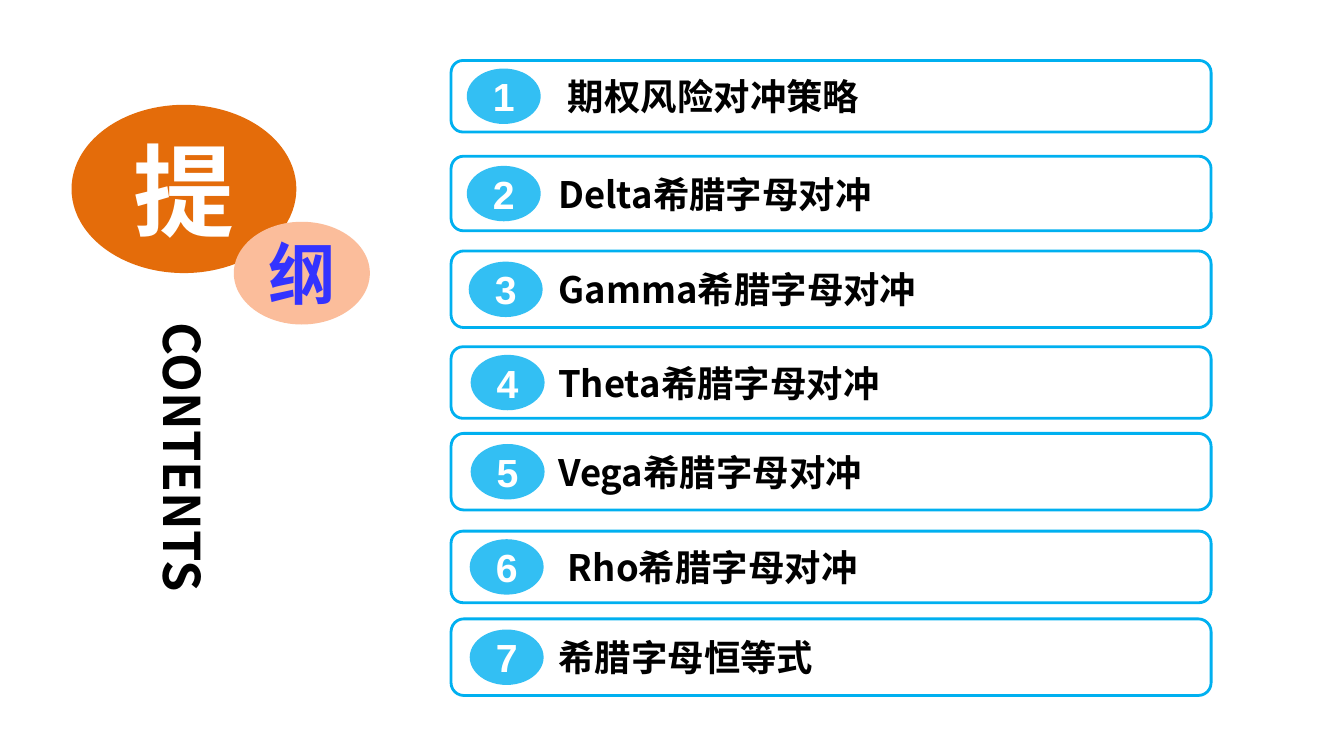
from pptx import Presentation
from pptx.dml.color import RGBColor
from pptx.enum.shapes import MSO_SHAPE
from pptx.enum.text import MSO_ANCHOR, PP_ALIGN
from pptx.oxml.ns import qn
from pptx.util import Pt
from lxml import etree

ROUNDED = MSO_SHAPE.ROUNDED_RECTANGLE
OVAL = MSO_SHAPE.OVAL
MIDDLE = MSO_ANCHOR.MIDDLE
LEFT = PP_ALIGN.LEFT
CENTER = PP_ALIGN.CENTER
CJK = "Noto Sans CJK SC"

# text, top, height, badge left, text inset
TOPICS = [
    ("期权风险对冲策略", 43.2, 51.1, 333.4, 81),
    ("Delta希腊字母对冲", 111.6, 53.3, 333.4, 74),
    ("Gamma希腊字母对冲", 179.3, 54.7, 334.8, 74),
    ("Theta希腊字母对冲", 247.7, 51.1, 336.2, 74),
    ("Vega希腊字母对冲", 309.6, 54.7, 336.2, 74),
    ("Rho希腊字母对冲", 379.4, 51.1, 335.5, 81),
    ("希腊字母恒等式", 442.1, 54.7, 335.5, 74),
]
# text, left, top, width, height, fill, size, color
TITLE = [
    ("提", 51.1, 74.9, 160.6, 120.2, "E46C0A", 72, "FFFFFF"),
    ("纲", 167, 158.4, 97.2, 73.4, "FBBD9B", 48, "3333FF"),
]
BAR_LEFT, BAR_WIDTH = 322.2, 542.9
BADGE_WIDTH, BADGE_HEIGHT = 52.8, 39.6


def rgb(value):
    return RGBColor.from_string(value)


def write(shape, text, size, color="000000", font=CJK, align=CENTER, inset=0):
    frame = shape.text_frame
    frame.word_wrap = align == LEFT
    frame.vertical_anchor = MIDDLE
    frame.margin_left = Pt(inset)
    frame.margin_right = frame.margin_top = frame.margin_bottom = 0
    para = frame.paragraphs[0]
    para.alignment = align
    span = para.add_run()
    span.text = text
    span.font.size = Pt(size)
    span.font.bold = True
    span.font.color.rgb = rgb(color)
    span.font.name = font
    east = etree.SubElement(span.font._element, qn("a:ea"))
    east.set("typeface", font)


def add_shape(page, kind, left, top, width, height, fill, line=None, alpha=None):
    shape = page.shapes.add_shape(kind, Pt(left), Pt(top), Pt(width), Pt(height))
    shape.shadow.inherit = False
    shape.fill.solid()
    shape.fill.fore_color.rgb = rgb(fill)
    if alpha:
        color = shape._element.spPr.find(qn("a:solidFill"))[0]
        etree.SubElement(color, qn("a:alpha")).set("val", str(alpha * 1000))
    if line:
        shape.line.color.rgb = rgb(line)
        shape.line.width = Pt(2)
    else:
        shape.line.fill.background()
    return shape


def add_topic(page, number, topic):
    text, top, height, badge_left, inset = topic
    bar = add_shape(page, ROUNDED, BAR_LEFT, top, BAR_WIDTH, height, "FFFFFF", line="00B0F0")
    write(bar, text, 26, align=LEFT, inset=inset)
    badge_top = top + (height - BADGE_HEIGHT) / 2
    badge = add_shape(page, OVAL, badge_left, badge_top, BADGE_WIDTH, BADGE_HEIGHT,
                      "00B0F0", alpha=80)
    write(badge, str(number), 28, color="FFFFFF", font="Arial")


def main():
    deck = Presentation()
    deck.slide_width, deck.slide_height = Pt(960), Pt(540)
    page = deck.slides.add_slide(deck.slide_layouts[6])
    for number, topic in enumerate(TOPICS, 1):
        add_topic(page, number, topic)
    for text, left, top, width, height, fill, size, color in TITLE:
        oval = add_shape(page, OVAL, left, top, width, height, fill)
        write(oval, text, size, color=color)
    contents = page.shapes.add_textbox(Pt(99.4), Pt(230.4), Pt(64.1), Pt(216))
    write(contents, "CONTENTS", 36, align=LEFT)
    contents.text_frame._txBody.bodyPr.set("vert", "eaVert")
    deck.save("out.pptx")


if __name__ == "__main__":
    main()
